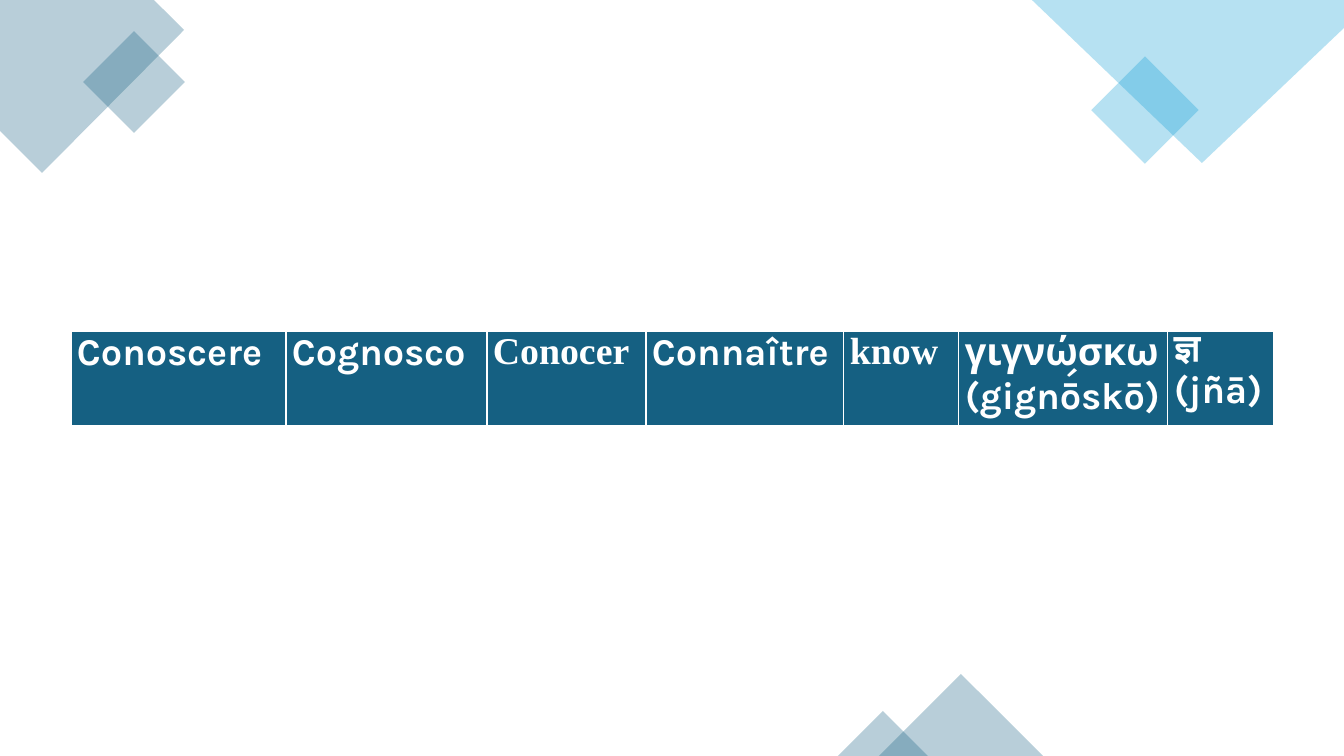
from lxml.etree import SubElement
from pptx import Presentation
from pptx.dml.color import RGBColor
from pptx.enum.shapes import MSO_SHAPE
from pptx.enum.text import PP_ALIGN
from pptx.oxml import parse_xml
from pptx.oxml.ns import nsdecls, qn
from pptx.util import Emu, Pt

COLORS = {"teal": "156082", "sky": "0F9ED5", "white": "FFFFFF"}
EMU_PER_PX = 12192000 / 1344
OPACITY = 30
BORDERS = {"lnL": 1, "lnR": 1, "lnT": 1, "lnB": 3}
CELL_FORMAT = {"margin_left": 6, "margin_right": 6, "margin_top": 0, "margin_bottom": 0}
FONT_FORMAT = {"size": Pt(27), "bold": True}


def px(length):
    return Emu(round(length * EMU_PER_PX))


def color(name):
    return RGBColor.from_string(COLORS[name])


class SlideBuilder:
    def __init__(self, presentation):
        self.slide = presentation.slides.add_slide(presentation.slide_layouts[6])
        self.shapes = self.slide.shapes

    def tint(self, shape, fill):
        shape.shadow.inherit = False
        shape.line.fill.background()
        shape.fill.solid()
        shape.fill.fore_color.rgb = color(fill)
        color_element = shape._element.spPr.find(qn("a:solidFill"))[0]
        SubElement(color_element, qn("a:alpha"), val=str(OPACITY * 1000))

    def polygon(self, points, fill):
        builder = self.shapes.build_freeform(*points[0], scale=EMU_PER_PX)
        builder.add_line_segments(points[1:], close=True)
        self.tint(builder.convert_to_shape(), fill)

    def preset(self, kind, box, fill, rotation=0):
        shape = self.shapes.add_shape(kind, *map(px, box))
        shape.rotation = rotation
        self.tint(shape, fill)

    def tilted_square(self, left, top, side, fill):
        self.preset(MSO_SHAPE.RECTANGLE, (left, top, side, side), fill, 315)

    def table(self, left, top, height, columns):
        width = sum(column[2] for column in columns)
        table = self.shapes.add_table(1, len(columns), *map(px, (left, top, width, height))).table
        table.first_row = table.horz_banding = False
        for index, (text, font_name, column_width) in enumerate(columns):
            table.columns[index].width = px(column_width)
            self.cell(table.cell(0, index), text, font_name)

    def cell(self, cell, text, font_name):
        for name, value in CELL_FORMAT.items():
            setattr(cell, name, px(value))
        cell.fill.solid()
        cell.fill.fore_color.rgb = color("teal")
        self.borders(cell)
        paragraph = cell.text_frame.paragraphs[0]
        paragraph.alignment = PP_ALIGN.JUSTIFY
        run = paragraph.add_run()
        run.text = text
        run.font.name = font_name
        run.font.color.rgb = color("white")
        for name, value in FONT_FORMAT.items():
            setattr(run.font, name, value)

    def borders(self, cell):
        properties = cell._tc.get_or_add_tcPr()
        for position, (tag, points) in enumerate(BORDERS.items()):
            properties.insert(position, parse_xml(
                f'<a:{tag} {nsdecls("a")} w="{Pt(points)}"><a:solidFill>'
                f'<a:srgbClr val="{COLORS["white"]}"/></a:solidFill></a:{tag}>'))


def main():
    presentation = Presentation()
    presentation.slide_width, presentation.slide_height = px(1344), px(756)
    builder = SlideBuilder(presentation)

    # Top left corner
    builder.polygon([(0, 0), (154, 0), (184, 30), (42, 173), (0, 131)], "teal")
    builder.tilted_square(98, 46, 72, "teal")

    # Top right corner
    builder.tilted_square(1107, 72, 76, "sky")
    builder.polygon([(1344, 0), (1032, 0), (1202, 163), (1344, 28)], "sky")

    # Bottom edge
    for box in ((879, 674, 164, 82), (838, 711, 90, 45)):
        builder.preset(MSO_SHAPE.ISOSCELES_TRIANGLE, box, "teal")

    # The verb "to know" across languages: text, font, column width
    builder.table(71, 331, 96, [
        ("Conoscere", "Karla", 215),
        ("Cognosco", "Karla", 201),
        ("Conocer", "Times New Roman", 159),
        ("Connaître", "Karla", 198),
        ("know", "Times New Roman", 115),
        ("γιγνώσκω (gignṓskō)", "Karla", 209),
        ("ज्ञ (jñā)", "Karla", 106),
    ])

    presentation.save("out.pptx")


if __name__ == "__main__":
    main()
